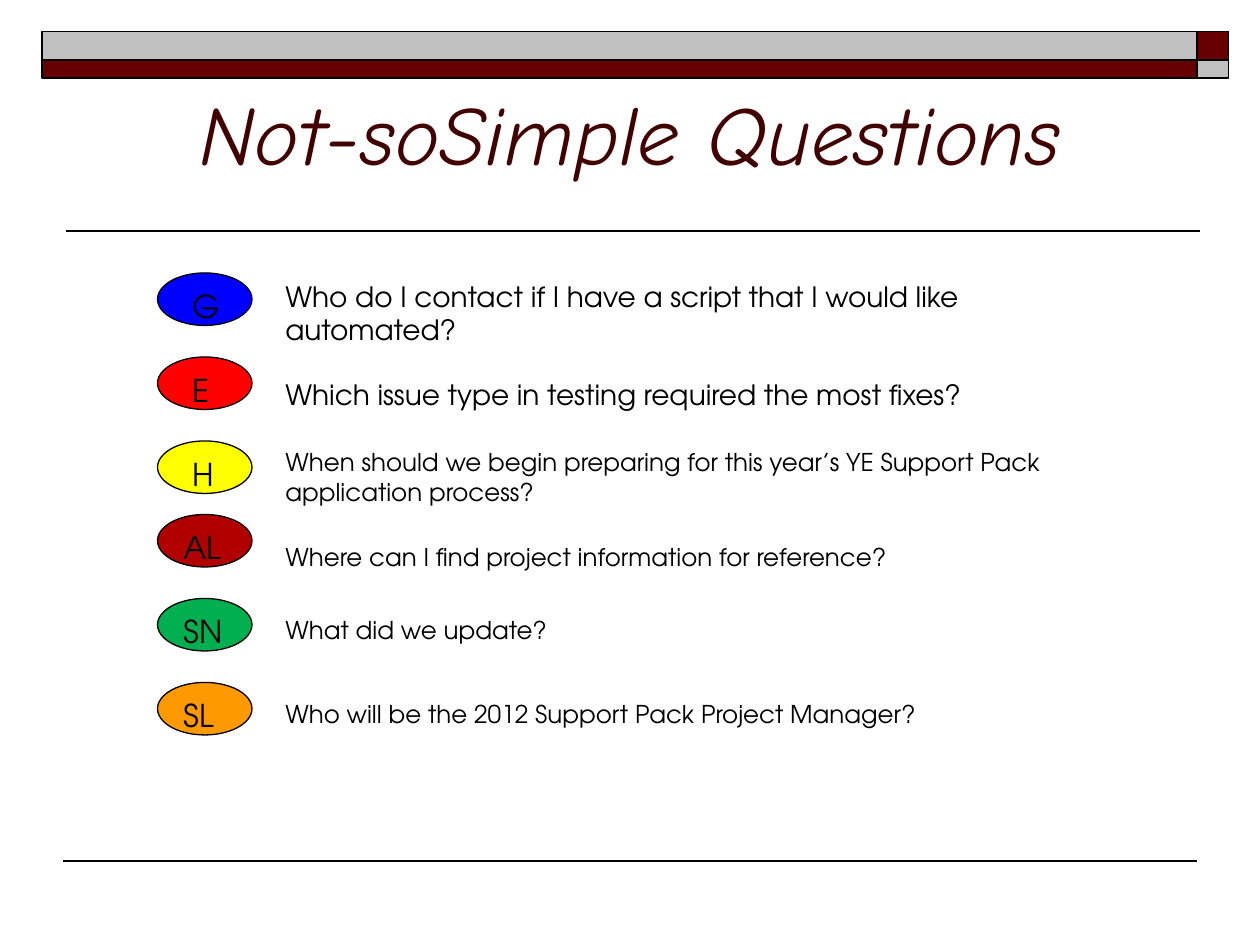
"""Build the Not-soSimple Questions slide."""
from lxml import etree
from pptx import Presentation, util as u
from pptx.dml.color import RGBColor
from pptx.enum import shapes, text
from pptx.oxml.ns import qn

COLORS = {
    "black": "000000", "maroon": "660000", "silver": "C0C0C0", "title": "420000",
    "blue": "0000FF", "red": "FF0000", "yellow": "FFFF00", "crimson": "B10000",
    "green": "00B050", "orange": "FF9900",
}
TITLE = "Not-soSimple Questions"
TITLE_FONT, BODY_FONT = "Comic Neue", "TeX Gyre Adventor"

# label, colour, oval top, question, question top, width, height, size
QUESTIONS = [
    ("G", "blue", 156, "Who do I contact if I have a script that I would like automated?",
     156, 444, 46, 16),
    ("E", "red", 204, "Which issue type in testing required the most fixes?",
     212, 492, 27, 16),
    ("H", "yellow", 252, "When should we begin preparing for this year’s YE Support Pack application process?",
     252, 486, 41, 14),
    ("AL", "crimson", 294, "Where can I find project information for reference?",
     306, 510, 24.5, 14),
    ("SN", "green", 342, "What did we update?", 348, 468, 24.5, 14),
    ("SL", "orange", 390, "Who will be the 2012 Support Pack Project Manager?",
     396, 540, 24.5, 14),
]
BAND_COLUMNS = [(24, 660), (684, 18)]
BAND_ROWS = [(18, 16.5, ("silver", "maroon")), (34.5, 10, ("maroon", "silver"))]
RULES = [(38, 686, 132, 1), (36, 684, 492, 0.75)]
OVAL_LEFT, OVAL_WIDTH, OVAL_HEIGHT = 90, 54, 30
QUESTION_LEFT = 156
INSET, LETTER_INDENT = 7.2, 5


def rgb(name):
    return RGBColor.from_string(COLORS[name])


def add_filled(page, kind, bounds, fill, weight):
    shape = page.shapes.add_shape(kind, *map(u.Pt, bounds))
    shape.shadow.inherit = False
    shape.fill.solid()
    shape.fill.fore_color.rgb = rgb(fill)
    shape.line.color.rgb = rgb("black")
    shape.line.width = u.Pt(weight)
    return shape


def add_rule(page, left, right, top, weight):
    rule = page.shapes.add_connector(
        shapes.MSO_CONNECTOR.STRAIGHT, u.Pt(left), u.Pt(top), u.Pt(right), u.Pt(top))
    rule.line.color.rgb = rgb("black")
    rule.line.width = u.Pt(weight)
    etree.SubElement(rule._element.spPr, qn("a:effectLst"))


def write(shape, words, size, font=BODY_FONT, color="black", italic=False,
          align=text.PP_ALIGN.LEFT, anchor=text.MSO_ANCHOR.TOP):
    frame = shape.text_frame
    frame.word_wrap = True
    frame.vertical_anchor = anchor
    para = frame.paragraphs[0]
    para.alignment = align
    span = para.add_run()
    span.text = words
    span.font.name = font
    span.font.size = u.Pt(size)
    span.font.italic = italic
    span.font.color.rgb = rgb(color)


def add_text(page, bounds, words, size, **style):
    box = page.shapes.add_textbox(*map(u.Pt, bounds))
    write(box, words, size, **style)


def main():
    deck = Presentation()
    deck.slide_width, deck.slide_height = u.Pt(720), u.Pt(540)
    page = deck.slides.add_slide(deck.slide_layouts[6])

    for top, height, fills in BAND_ROWS:
        for (left, width), fill in zip(BAND_COLUMNS, fills):
            add_filled(page, shapes.MSO_SHAPE.RECTANGLE, (left, top, width, height), fill, 1)
    for rule in RULES:
        add_rule(page, *rule)

    add_text(page, (36, 18, 648, 90), TITLE, 48, font=TITLE_FONT, color="title",
             italic=True, align=text.PP_ALIGN.CENTER, anchor=text.MSO_ANCHOR.BOTTOM)

    for label, color, oval_top, question, top, width, height, size in QUESTIONS:
        oval = add_filled(page, shapes.MSO_SHAPE.OVAL,
                          (OVAL_LEFT, oval_top, OVAL_WIDTH, OVAL_HEIGHT), color, 0.75)
        indent = LETTER_INDENT if len(label) == 1 else 0
        oval.text_frame.margin_left = u.Pt(INSET + indent)
        oval.text_frame.margin_right = 0
        write(oval, label, 18)
        add_text(page, (QUESTION_LEFT, top, width, height), question, size)

    deck.save("out.pptx")


if __name__ == "__main__":
    main()
